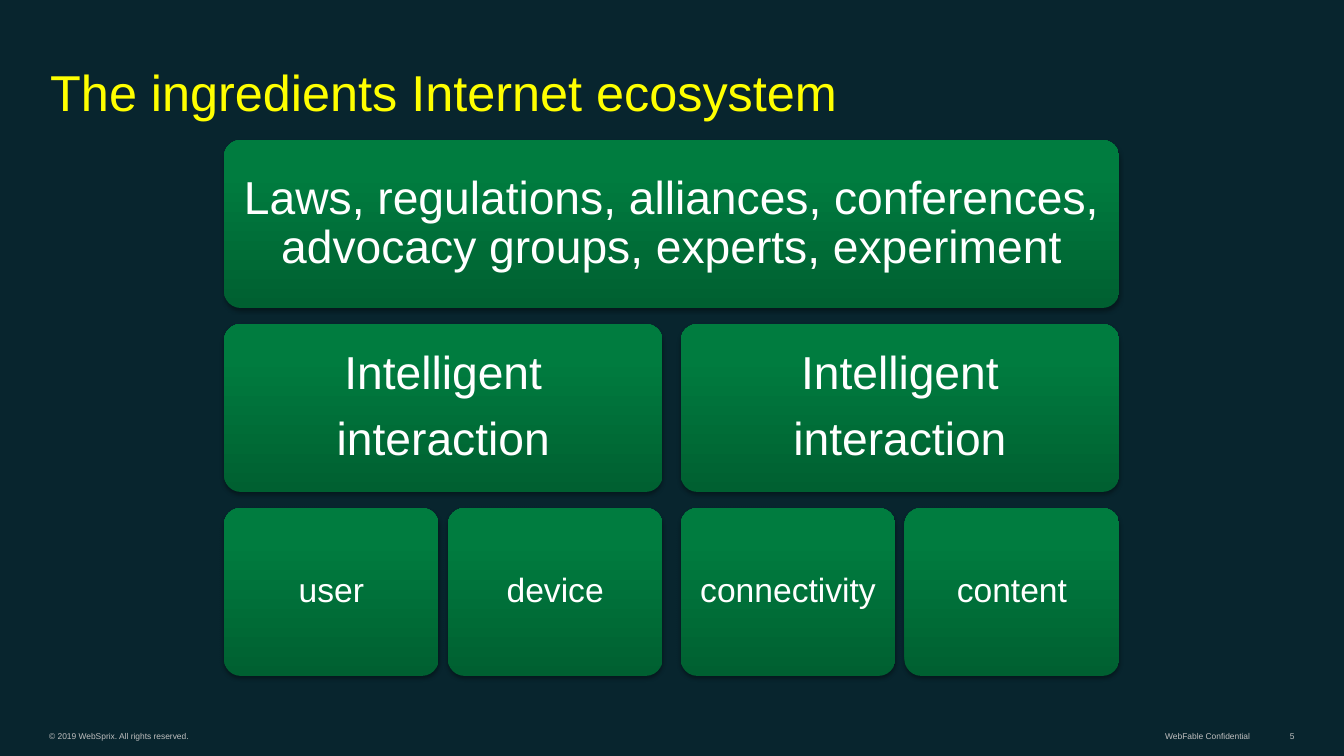
from dataclasses import dataclass
from pptx import Presentation
from pptx.dml.color import RGBColor
from pptx.enum.shapes import MSO_SHAPE
from pptx.enum.text import MSO_ANCHOR, PP_ALIGN
from pptx.oxml import parse_xml
from pptx.oxml.ns import nsdecls
from pptx.util import Pt


@dataclass(frozen=True)
class Theme:
    font: str = "Arial"
    back: str = "08252E"
    title: str = "FFFF00"
    text: str = "FFFFFF"
    foot: str = "C0C0C0"
    stops: tuple = ((0, "006031"), (80, "007C3F"), (100, "007D3F"))
    head: int = 36
    large: int = 33
    small: int = 24
    tiny: int = 6


class Deck:
    def __init__(self, theme):
        self.theme = theme
        self.file = Presentation()
        self.file.slide_width, self.file.slide_height = Pt(960), Pt(540)
        self.slide = self.file.slides.add_slide(self.file.slide_layouts[6])
        fill = self.slide.background.fill
        fill.solid()
        fill.fore_color.rgb = RGBColor.from_string(theme.back)

    def set_text(self, shape, lines, size, color, pad, anchor, form):
        frame = shape.text_frame
        side, edge = pad
        style = dict(word_wrap=True, vertical_anchor=anchor,
                     margin_left=Pt(side), margin_right=Pt(side),
                     margin_top=Pt(edge), margin_bottom=Pt(edge))
        for name, value in style.items():
            setattr(frame, name, value)
        frame.text = "\n".join(lines)
        for para in frame.paragraphs:
            for name, value in form.items():
                setattr(para, name, value)
            for name, value in dict(name=self.theme.font, size=Pt(size)).items():
                setattr(para.font, name, value)
            para.font.color.rgb = RGBColor.from_string(color)

    def label(self, box, text, size, color, edge, **form):
        shape = self.slide.shapes.add_textbox(*map(Pt, box))
        self.set_text(shape, [text], size, color, (7.2, edge),
                      MSO_ANCHOR.BOTTOM, form)

    def tile(self, box, lines, size, pad):
        shape = self.slide.shapes.add_shape(
            MSO_SHAPE.ROUNDED_RECTANGLE, *map(Pt, box))
        shape.adjustments[0] = 0.1
        shape.line.fill.background()
        shape.shadow.inherit = False
        props = shape.element.spPr
        # Gradient running upward, placed right after the geometry
        stops = "".join(
            f'<a:gs pos="{pos * 1000}"><a:srgbClr val="{color}"/></a:gs>'
            for pos, color in self.theme.stops)
        props.insert(2, parse_xml(
            f'<a:gradFill {nsdecls("a")} rotWithShape="1"><a:gsLst>{stops}'
            '</a:gsLst><a:lin ang="16200000" scaled="0"/></a:gradFill>'))
        # Soft shadow straight below
        props[-1].append(parse_xml(
            f'<a:outerShdw {nsdecls("a")} blurRad="{Pt(3.1)}" '
            f'dist="{Pt(1.8)}" dir="5400000" rotWithShape="0">'
            '<a:srgbClr val="000000"><a:alpha val="35000"/></a:srgbClr>'
            '</a:outerShdw>'))
        self.set_text(shape, lines, size, self.theme.text, (pad, pad),
                      MSO_ANCHOR.MIDDLE,
                      dict(alignment=PP_ALIGN.CENTER, line_spacing=0.9,
                           space_after=Pt(0.35 * size)))


def main():
    theme = Theme()
    deck = Deck(theme)

    # Footer
    for left, width, text, align in (
            (28, 360, "© 2019 WebSprix. All rights reserved.", PP_ALIGN.LEFT),
            (800, 100, "WebFable Confidential", PP_ALIGN.RIGHT),
            (911.5, 20.2, "5", PP_ALIGN.RIGHT)):
        deck.label((left, 518.4, width, 13.7), text, theme.tiny, theme.foot,
                   2.9, alignment=align)

    # Title
    deck.label((28.8, 23.8, 901.4, 66.2), "The ingredients Internet ecosystem",
               theme.head, theme.title, 3.6, line_spacing=0.8)

    # Tile grid: two halves, each split into two quarters
    left, top, high, pitch = 160, 100, 120, 131.4
    quart, gap, split = 153.4, 6.5, 12.9
    half = 2 * quart + gap
    step = half + split

    deck.tile((left, top, half + step, high),
              ["Laws, regulations, alliances, conferences, "
               "advocacy groups, experts, experiment"], theme.large, 10)
    pairs = (("user", "device"), ("connectivity", "content"))
    for col, pair in enumerate(pairs):
        start = left + col * step
        deck.tile((start, top + pitch, half, high),
                  ["Intelligent", "interaction"], theme.large, 10)
        for part, word in enumerate(pair):
            deck.tile((start + part * (quart + gap), top + 2 * pitch,
                       quart, high), [word], theme.small, 7.2)

    deck.file.save("out.pptx")


if __name__ == "__main__":
    main()
